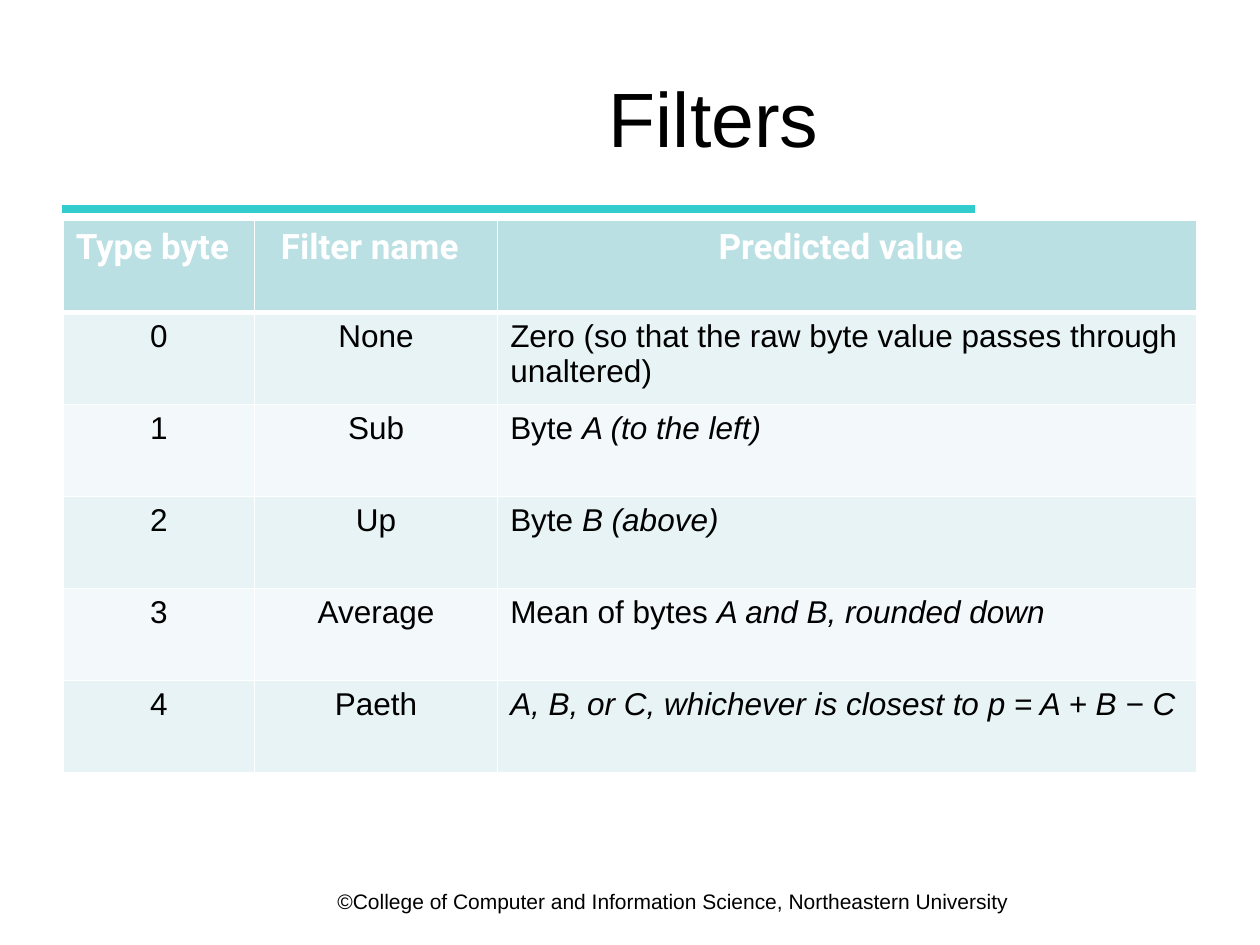
from pptx import Presentation
from pptx.dml.color import RGBColor
from pptx.enum.shapes import MSO_CONNECTOR
from pptx.enum.text import MSO_ANCHOR, PP_ALIGN
from pptx.oxml.ns import qn
from pptx.util import Inches, Pt
from lxml import etree

CENTER, LEFT = PP_ALIGN.CENTER, PP_ALIGN.LEFT
MIDDLE = MSO_ANCHOR.MIDDLE
STRAIGHT = MSO_CONNECTOR.STRAIGHT

BLACK, WHITE, TEAL = "000000", "FFFFFF", "33CCCC"
HEADER_FILL = "BBE0E3"
BAND_FILLS = ["E7F3F4", "F3F9FA"]

COLUMN_WIDTHS = [1.52, 1.93, 5.55]
ROW_HEIGHT = 0.73
HEADERS = ["Type byte", "Filter name", "Predicted value"]
# Filter name, then the upright and the italic part of its predicted value
FILTERS = [
    ("None", "Zero (so that the raw byte value passes through unaltered)", ""),
    ("Sub", "Byte ", "A (to the left)"),
    ("Up", "Byte ", "B (above)"),
    ("Average", "Mean of bytes ", "A and B, rounded down"),
    ("Paeth", "", "A, B, or C, whichever is closest to p = A + B − C"),
]


def color(value):
    return RGBColor.from_string(value)


def add_span(para, text, size, font="Arial", fill=BLACK, bold=False, italic=False):
    span = para.add_run()
    span.text = text
    span.font.name = font
    span.font.size = Pt(size)
    span.font.bold = bold
    span.font.italic = italic
    span.font.color.rgb = color(fill)


def add_text(page, text, size, left, top, width, height, align=LEFT):
    box = page.shapes.add_textbox(Inches(left), Inches(top), Inches(width), Inches(height))
    box.text_frame.word_wrap = True
    para = box.text_frame.paragraphs[0]
    para.alignment = align
    add_span(para, text, size)
    return box


def add_rule(page, left, top, right):
    rule = page.shapes.add_connector(
        STRAIGHT, Inches(left), Inches(top), Inches(right), Inches(top))
    rule.line.color.rgb = color(TEAL)
    rule.line.width = Pt(4.5)
    etree.SubElement(rule._element.spPr, qn("a:effectLst"))


def add_borders(cell, top, bottom):
    """Draw white borders; top and bottom are widths in points. Call before filling."""
    properties = cell._tc.get_or_add_tcPr()
    for side, width in (("L", 1), ("R", 1), ("T", top), ("B", bottom)):
        line = etree.SubElement(properties, qn(f"a:ln{side}"), w=str(Pt(width)))
        fill = etree.SubElement(line, qn("a:solidFill"))
        etree.SubElement(fill, qn("a:srgbClr"), val=WHITE)


def style_cell(cell, fill, align, top=1, bottom=1):
    add_borders(cell, top, bottom)
    cell.fill.solid()
    cell.fill.fore_color.rgb = color(fill)
    para = cell.text_frame.paragraphs[0]
    para.alignment = align
    return para


def add_filter_table(page, left, top):
    row_count = len(FILTERS) + 1
    table = page.shapes.add_table(
        row_count, len(HEADERS), Inches(left), Inches(top),
        Inches(sum(COLUMN_WIDTHS)), Inches(ROW_HEIGHT * row_count)).table
    table.horz_banding = False
    for column, width in zip(table.columns, COLUMN_WIDTHS):
        column.width = Inches(width)
    for row in table.rows:
        row.height = Inches(ROW_HEIGHT)

    for index, header in enumerate(HEADERS):
        cell = table.cell(0, index)
        cell.margin_left, cell.margin_right = Inches(0.05), Inches(0.15)
        para = style_cell(cell, HEADER_FILL, CENTER, bottom=3)
        add_span(para, header, 20, "Roboto", WHITE, bold=True)

    for number, (name, upright, italic) in enumerate(FILTERS):
        fill = BAND_FILLS[number % 2]
        columns = [
            (CENTER, str(number), ""),
            (CENTER, name, ""),
            (LEFT, upright, italic),
        ]
        for index, (align, plain, slanted) in enumerate(columns):
            cell = table.cell(number + 1, index)
            para = style_cell(cell, fill, align, top=1 if number else 3)
            if plain:
                add_span(para, plain, 18)
            if slanted:
                add_span(para, slanted, 18, italic=True)


def main():
    deck = Presentation()
    deck.slide_width, deck.slide_height = Inches(10), Inches(7.5)
    page = deck.slides.add_slide(deck.slide_layouts[6])
    add_text(page, "©College of Computer and Information Science, Northeastern University",
             12, 2.58, 7, 5.66, 0.3)
    add_rule(page, 0.49, 1.66, 7.74)
    title = add_text(page, "Filters", 44, 1.83, 0.3, 7.67, 1.25, CENTER)
    title.text_frame.vertical_anchor = MIDDLE
    add_filter_table(page, 0.5, 1.75)
    deck.save("out.pptx")


if __name__ == "__main__":
    main()
